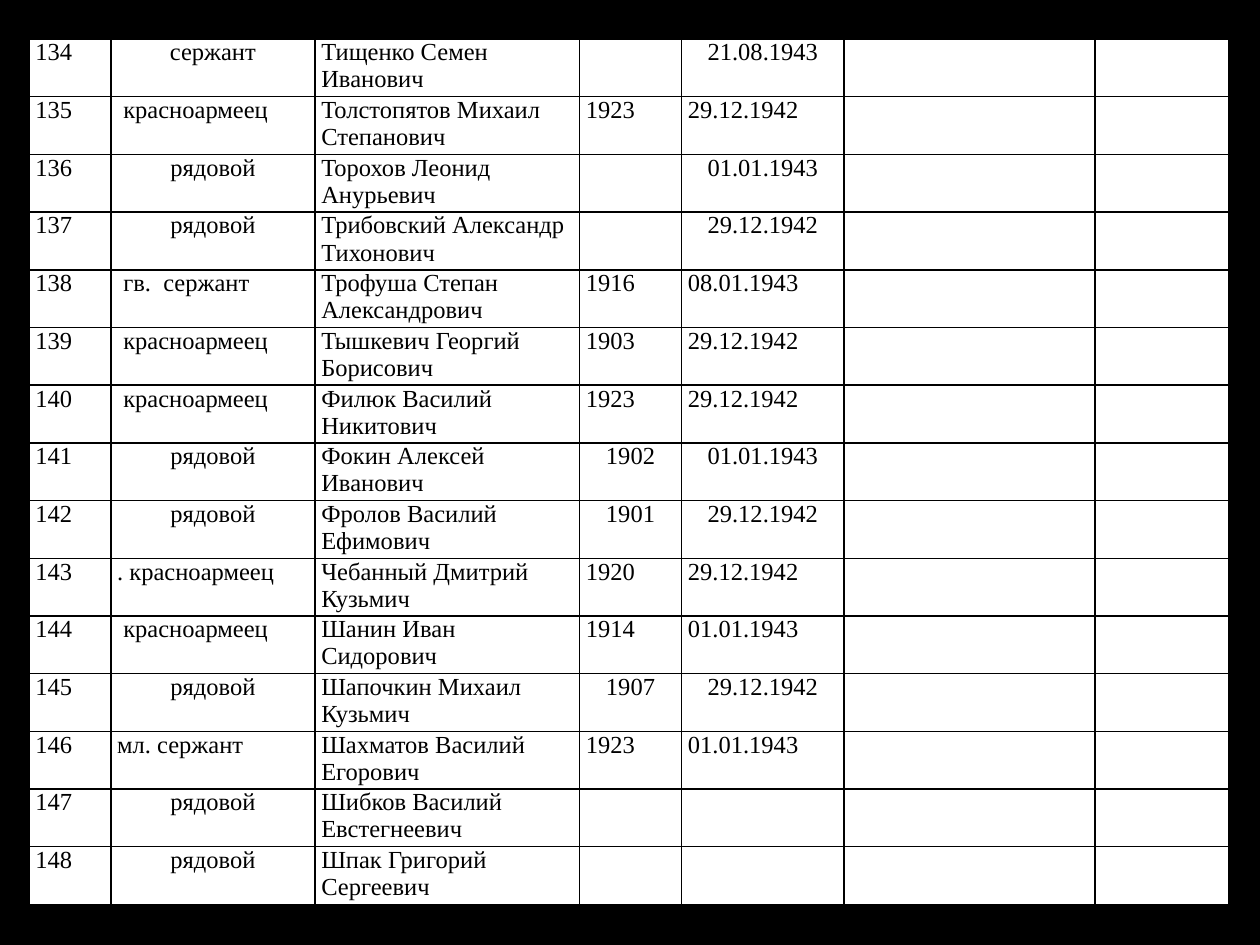
from lxml.etree import SubElement
from pptx import Presentation
from pptx.dml.color import RGBColor
from pptx.enum.text import PP_ALIGN
from pptx.oxml.ns import qn
from pptx.util import Inches, Pt

BLACK = RGBColor(0, 0, 0)
WHITE = RGBColor(255, 255, 255)
FONT_NAME = "Times New Roman"
COLUMN_WIDTHS = [0.65, 1.62, 2.1, 0.81, 1.29, 1.99, 1.06]
ROW_HEIGHT = 0.458
FIRST_NUMBER = 134
CENTRED_RANKS = {"сержант", "рядовой"}
CENTRED_COLUMNS = {1, 3, 4}
SOLDIERS = [
    ("сержант", "Тищенко Семен Иванович", "", "21.08.1943"),
    (" красноармеец", "Толстопятов Михаил Степанович", "1923", "29.12.1942"),
    ("рядовой", "Торохов Леонид Анурьевич", "", "01.01.1943"),
    ("рядовой", "Трибовский Александр Тихонович", "", "29.12.1942"),
    (" гв.  сержант", "Трофуша Степан Александрович", "1916", "08.01.1943"),
    (" красноармеец", "Тышкевич Георгий Борисович", "1903", "29.12.1942"),
    (" красноармеец", "Филюк Василий Никитович", "1923", "29.12.1942"),
    ("рядовой", "Фокин Алексей Иванович", "1902", "01.01.1943"),
    ("рядовой", "Фролов Василий Ефимович", "1901", "29.12.1942"),
    (". красноармеец", "Чебанный Дмитрий Кузьмич", "1920", "29.12.1942"),
    (" красноармеец", "Шанин Иван Сидорович", "1914", "01.01.1943"),
    ("рядовой", "Шапочкин Михаил Кузьмич", "1907", "29.12.1942"),
    ("мл. сержант", "Шахматов Василий Егорович", "1923", "01.01.1943"),
    ("рядовой", "Шибков Василий Евстегнеевич", "", ""),
    ("рядовой", "Шпак Григорий Сергеевич", "", ""),
]


def add_borders(cell):
    """Draw a thin black line on each side of a cell that has no fill yet."""
    properties = cell._tc.get_or_add_tcPr()
    for side in ("lnL", "lnR", "lnT", "lnB"):
        line = SubElement(properties, qn(f"a:{side}"), w=str(Pt(1)))
        fill = SubElement(line, qn("a:solidFill"))
        SubElement(fill, qn("a:srgbClr"), val=str(BLACK))


def format_cell(cell, text, centred):
    """Write the text of a cell and set its borders, fill, margins and font."""
    add_borders(cell)
    cell.fill.solid()
    cell.fill.fore_color.rgb = WHITE
    cell.margin_left = cell.margin_right = Inches(0.05)
    cell.margin_top = cell.margin_bottom = 0
    para = cell.text_frame.paragraphs[0]
    if not text:
        return
    para.text = text
    para.alignment = PP_ALIGN.CENTER if centred else PP_ALIGN.LEFT
    for span in para.runs:
        span.font.name = FONT_NAME
        span.font.size = Pt(14)
        span.font.color.rgb = BLACK


def add_soldier_table(page):
    """Add the numbered list of soldiers as a table."""
    frame = page.shapes.add_table(
        len(SOLDIERS), len(COLUMN_WIDTHS), Inches(0.23), Inches(0.31),
        Inches(sum(COLUMN_WIDTHS)), Inches(ROW_HEIGHT * len(SOLDIERS)))
    table = frame.table
    table.first_row = table.horz_banding = False
    for column, width in zip(table.columns, COLUMN_WIDTHS):
        column.width = Inches(width)
    for index, soldier in enumerate(SOLDIERS):
        row = table.rows[index]
        row.height = Inches(ROW_HEIGHT)
        texts = (str(FIRST_NUMBER + index), *soldier, "", "")
        for position, (cell, text) in enumerate(zip(row.cells, texts)):
            centred = soldier[0] in CENTRED_RANKS and position in CENTRED_COLUMNS
            format_cell(cell, text, centred)


def main():
    """Build the slide and save the deck."""
    deck = Presentation()
    deck.slide_width, deck.slide_height = Inches(10), Inches(7.5)
    page = deck.slides.add_slide(deck.slide_layouts[6])
    page.background.fill.solid()
    page.background.fill.fore_color.rgb = BLACK
    add_soldier_table(page)
    deck.save("out.pptx")


if __name__ == "__main__":
    main()
